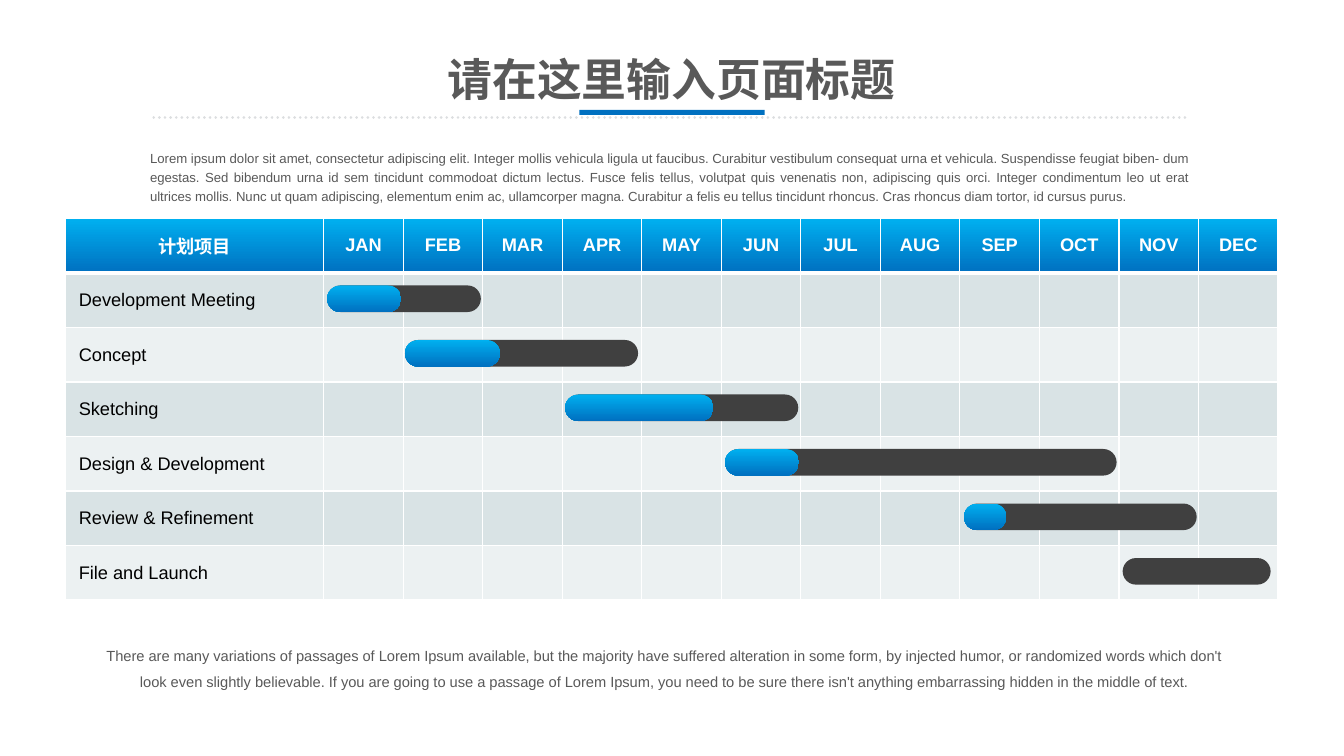
"""Build a one-slide yearly project plan with a Gantt table."""
from lxml import etree
from pptx import Presentation
from pptx import util as u
from pptx.dml.color import RGBColor
from pptx.enum import dml, shapes, text
from pptx.oxml import ns

Pt = u.Pt
COLORS = {
    "text": "595959", "label": "000000", "white": "FFFFFF", "rule": "DCDEE0",
    "sky": "00B0F0", "blue": "0070C0", "bar": "404040",
    "odd": "D9E3E5", "even": "ECF1F2",
}
RGB = {name: RGBColor.from_string(value) for name, value in COLORS.items()}


def write(box, words, size, color, align, bold=False, margins=(0, 0, 0, 0)):
    """Put one formatted run in a shape or cell and return its paragraph."""
    box.margin_left, box.margin_top, box.margin_right, box.margin_bottom = map(Pt, margins)
    p = (box.text_frame if hasattr(box, "text_frame") else box).paragraphs[0]
    p.alignment = align
    r = p.add_run()
    r.text = words
    r.font.name, r.font.size, r.font.bold = "Arial", Pt(size), bold
    r.font.color.rgb = RGB[color]
    return p


def fill_gradient(fill):
    """Fill from sky at the top to blue at the bottom."""
    fill.gradient()
    fill.gradient_angle = 270
    for stop, name in zip(fill.gradient_stops, ("sky", "blue")):
        stop.color.rgb = RGB[name]


prs = Presentation()
prs.slide_width, prs.slide_height = Pt(960), Pt(540)
s = prs.slides.add_slide(prs.slide_layouts[5])

title = s.shapes.title
title.left, title.top, title.width, title.height = Pt(234.3), Pt(39.6), Pt(491), Pt(33.1)
tf = title.text_frame
tf.word_wrap = True
tf.auto_size = text.MSO_AUTO_SIZE.NONE
tf.vertical_anchor = text.MSO_ANCHOR.MIDDLE
write(tf, "请在这里输入页面标题", 32, "text", text.PP_ALIGN.CENTER, True, (1.5,) * 4)

rule = s.shapes.add_connector(
    shapes.MSO_CONNECTOR.STRAIGHT, Pt(109.8), Pt(84.2), Pt(850.2), Pt(84.2))
rule.line.color.rgb = RGB["rule"]
rule.line.width = Pt(2)
rule.line.dash_style = dml.MSO_LINE.ROUND_DOT
rule._element.spPr.find(ns.qn("a:ln")).set("cap", "rnd")
etree.SubElement(rule._element.spPr, ns.qn("a:effectLst"))

accent = s.shapes.add_shape(
    shapes.MSO_SHAPE.RECTANGLE, Pt(413.8), Pt(78.5), Pt(132.5), Pt(3.6))
accent.shadow.inherit = False
accent.fill.solid()
accent.fill.fore_color.rgb = RGB["blue"]
accent.line.fill.background()

intro = s.shapes.add_textbox(Pt(107.2), Pt(105.1), Pt(741.2), Pt(37.4))
tf = intro.text_frame
tf.word_wrap = True
p = write(
    tf,
    "Lorem ipsum dolor sit amet, consectetur adipiscing elit. Integer mollis vehicula "
    "ligula ut faucibus. Curabitur vestibulum consequat urna et vehicula. Suspendisse "
    "feugiat biben- dum egestas. Sed bibendum urna id sem tincidunt commodoat dictum "
    "lectus. Fusce felis tellus, volutpat quis venenatis non, adipiscing quis orci. "
    "Integer condimentum leo ut erat ultrices mollis. Nunc ut quam adipiscing, elementum "
    "enim ac, ullamcorper magna. Curabitur a felis eu tellus tincidunt rhoncus. Cras "
    "rhoncus diam tortor, id cursus purus.",
    9.35, "text", text.PP_ALIGN.JUSTIFY)
p.line_spacing = 1.2
p.space_before = Pt(8.5)

HEADERS = ["计划项目", "JAN", "FEB", "MAR", "APR", "MAY", "JUN",
           "JUL", "AUG", "SEP", "OCT", "NOV", "DEC"]
TASKS = [
    ("Development Meeting", 233.7, 109.8, 52.8),
    ("Concept", 289.3, 166.5, 67.8),
    ("Sketching", 403.7, 166.5, 105.9),
    ("Design & Development", 517.9, 279.7, 52.8),
    ("Review & Refinement", 688.6, 166.2, 30.2),
    ("File and Launch", 801.9, 105.7, 0),
]
ROW_H = 38.95
CELL_MARGINS = (9.4, 4.7, 9.4, 4.7)
rows, cols = len(TASKS) + 1, len(HEADERS)
table = s.shapes.add_table(
    rows, cols, Pt(46.9), Pt(156), Pt(866.1), Pt(ROW_H * rows)).table
for j, column in enumerate(table.columns):
    column.width = Pt(56.82 if j else 184.3)
for i, row in enumerate(table.rows):
    row.height = Pt(ROW_H)
    for j, cell in enumerate(row.cells):
        tcPr = cell._tc.get_or_add_tcPr()
        for side in "LRTB":
            thick = (i, side) in ((0, "B"), (1, "T"))
            ln = etree.SubElement(tcPr, ns.qn("a:ln" + side), w=str(Pt(3 if thick else 1)))
            solid = etree.SubElement(ln, ns.qn("a:solidFill"))
            etree.SubElement(solid, ns.qn("a:srgbClr"), val=COLORS["white"])
        cell.vertical_anchor = text.MSO_ANCHOR.MIDDLE
        if i == 0:
            fill_gradient(cell.fill)
            write(cell, HEADERS[j], 13, "white", text.PP_ALIGN.CENTER, True, CELL_MARGINS)
            continue
        cell.fill.solid()
        cell.fill.fore_color.rgb = RGB["odd" if i % 2 else "even"]
        if j == 0:
            write(cell, TASKS[i - 1][0], 13, "label", text.PP_ALIGN.LEFT, False, CELL_MARGINS)

for i, (task, left, planned, done) in enumerate(TASKS):
    for width, is_done in ((planned, False), (done, True)):
        if not width:
            continue
        sp = s.shapes.add_shape(
            shapes.MSO_SHAPE.ROUNDED_RECTANGLE,
            Pt(left), Pt(203.9 + ROW_H * i), Pt(width), Pt(19))
        sp.adjustments[0] = 0.5
        sp.shadow.inherit = False
        sp.line.fill.background()
        if is_done:
            fill_gradient(sp.fill)
        else:
            sp.fill.solid()
            sp.fill.fore_color.rgb = RGB["bar"]

closing = s.shapes.add_textbox(Pt(58.5), Pt(452.2), Pt(837.4), Pt(44.6))
tf = closing.text_frame
tf.word_wrap = True
p = write(
    tf,
    "There are many variations of passages of Lorem Ipsum available, but the majority have "
    "suffered alteration in some form, by injected humor, or randomized words which don't "
    "look even slightly believable. If you are going to use a passage of Lorem Ipsum, you "
    "need to be sure there isn't anything embarrassing hidden in the middle of text.",
    10.5, "text", text.PP_ALIGN.CENTER, False, (7.2, 3.6, 11.5, 2.9))
p.line_spacing = 1.5

prs.save("out.pptx")
